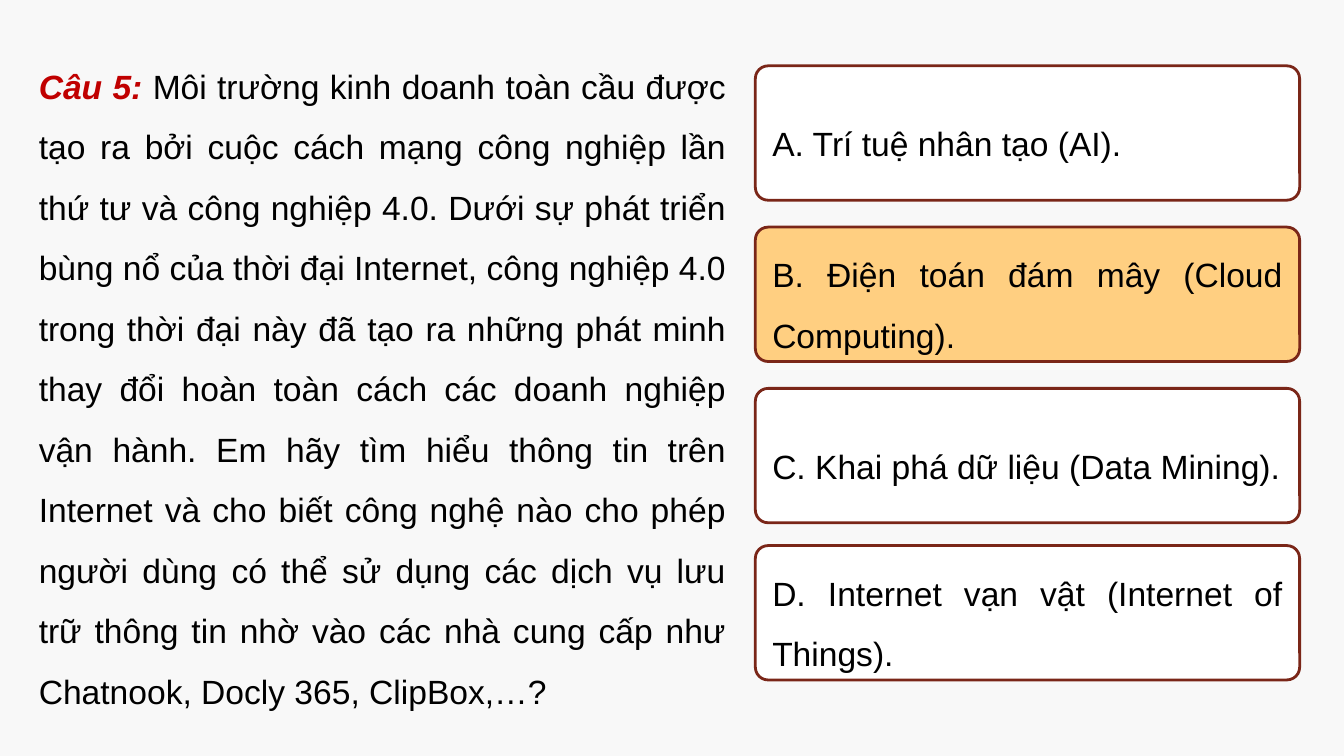
from pptx import Presentation
from pptx.dml.color import RGBColor
from pptx.enum.shapes import MSO_SHAPE
from pptx.enum.text import MSO_ANCHOR, MSO_AUTO_SIZE, PP_ALIGN
from pptx.util import Inches, Pt

QUESTION = (
    "Môi trường kinh doanh toàn cầu được tạo ra bởi cuộc cách mạng công nghiệp "
    "lần thứ tư và công nghiệp 4.0. Dưới sự phát triển bùng nổ của thời đại "
    "Internet, công nghiệp 4.0 trong thời đại này đã tạo ra những phát minh thay "
    "đổi hoàn toàn cách các doanh nghiệp vận hành. Em hãy tìm hiểu thông tin trên "
    "Internet và cho biết công nghệ nào cho phép người dùng có thể sử dụng các "
    "dịch vụ lưu trữ thông tin nhờ vào các nhà cung cấp như "
    "Chatnook, Docly 365, ClipBox,…?"
)
# Top edge in inches, text and fill of each answer
ANSWERS = [
    (0.49, "A. Trí tuệ nhân tạo (AI).", "FFFFFF"),
    (1.69, "B. Điện toán đám mây (Cloud Computing).", "FFCF81"),
    (2.89, "C. Khai phá dữ liệu (Data Mining).", "FFFFFF"),
    (4.06, "D. Internet vạn vật (Internet of Things).", "FFFFFF"),
]


def rgb(color):
    return RGBColor.from_string(color)


def add_run(p, text, size=18, color="000000", bold=False, italic=False):
    r = p.add_run()
    r.text = text
    r.font.name = "Arial"
    r.font.size = Pt(size)
    r.font.color.rgb = rgb(color)
    r.font.bold = bold
    r.font.italic = italic


def justified(tf):
    """Return the frame's first paragraph, justified at 1.5 line spacing."""
    tf.word_wrap = True
    p = tf.paragraphs[0]
    p.alignment = PP_ALIGN.JUSTIFY
    p.line_spacing = 1.5
    return p


def add_question(s, left, top, width, height):
    box = s.shapes.add_textbox(*map(Inches, (left, top, width, height)))
    tf = box.text_frame
    p = justified(tf)
    tf.auto_size = MSO_AUTO_SIZE.SHAPE_TO_FIT_TEXT
    add_run(p, "Câu 5: ", color="C00000", bold=True, italic=True)
    add_run(p, QUESTION)


def add_answer(s, top, text, fill, left=5.62, width=4.05, height=1):
    sp = s.shapes.add_shape(MSO_SHAPE.ROUNDED_RECTANGLE,
                            *map(Inches, (left, top, width, height)))
    sp.adjustments[0] = 0.095
    sp.shadow.inherit = False
    sp.fill.solid()
    sp.fill.fore_color.rgb = rgb(fill)
    sp.line.color.rgb = rgb("7A2618")
    sp.line.width = Pt(1.5)
    sp.text_frame.vertical_anchor = MSO_ANCHOR.MIDDLE
    add_run(justified(sp.text_frame), text)


def main():
    prs = Presentation()
    prs.slide_width = Inches(10)
    prs.slide_height = prs.slide_width * 9 // 16
    s = prs.slides.add_slide(prs.slide_layouts[6])
    s.background.fill.solid()
    s.background.fill.fore_color.rgb = rgb("F8F8F8")
    add_question(s, 0.19, 0.29, 5.31, 5.04)
    for top, text, fill in ANSWERS:
        add_answer(s, top, text, fill)
    prs.save("out.pptx")


if __name__ == "__main__":
    main()
